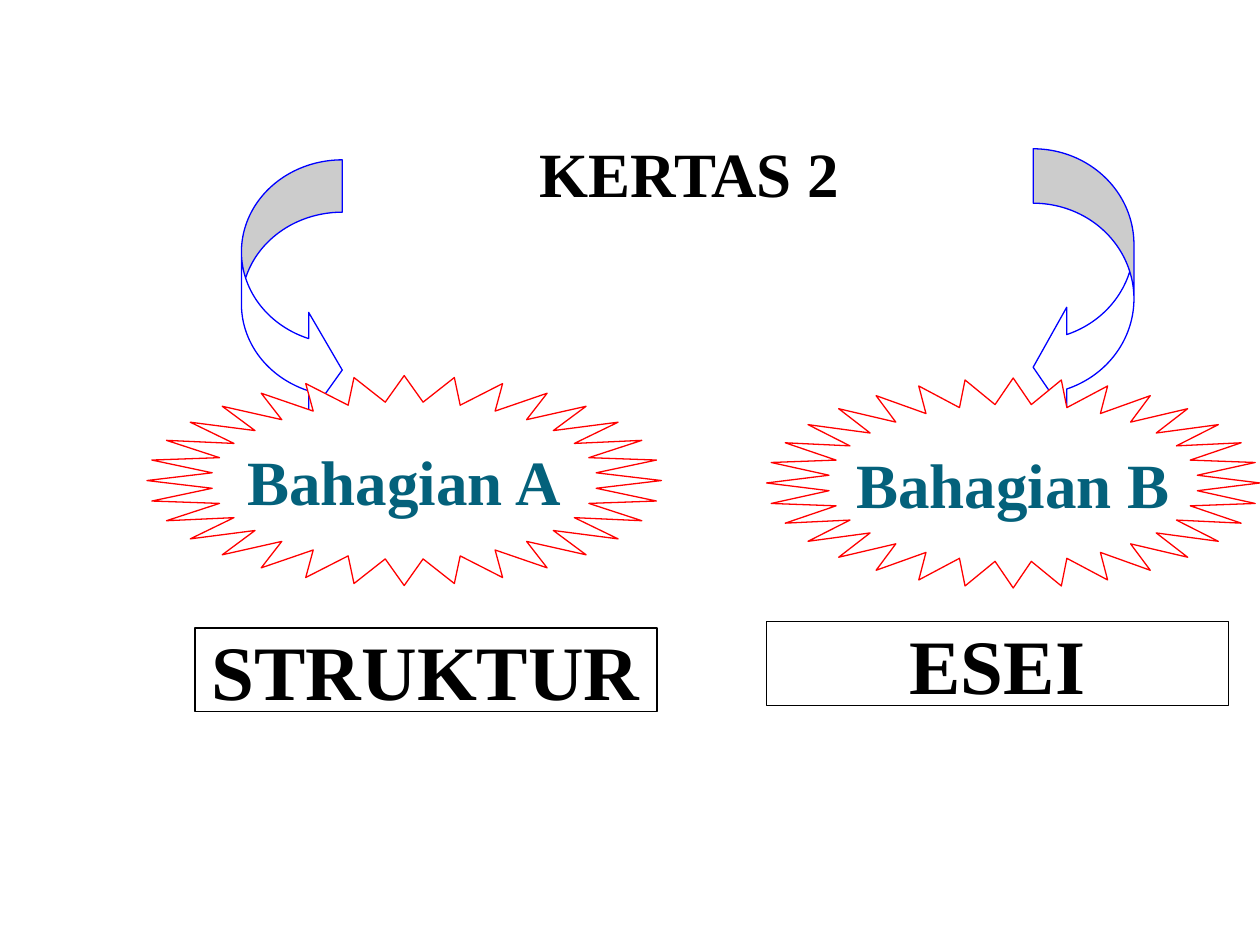
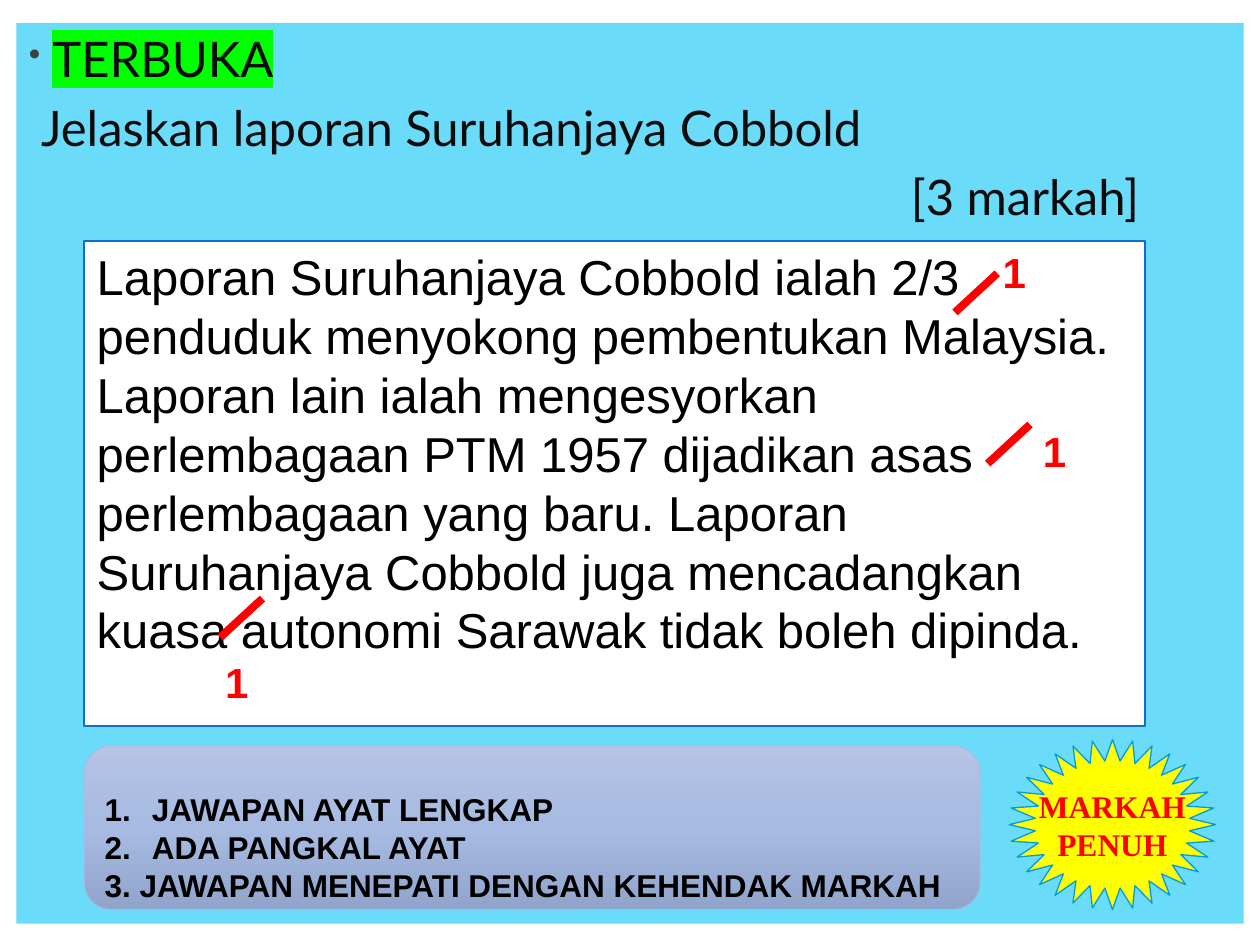
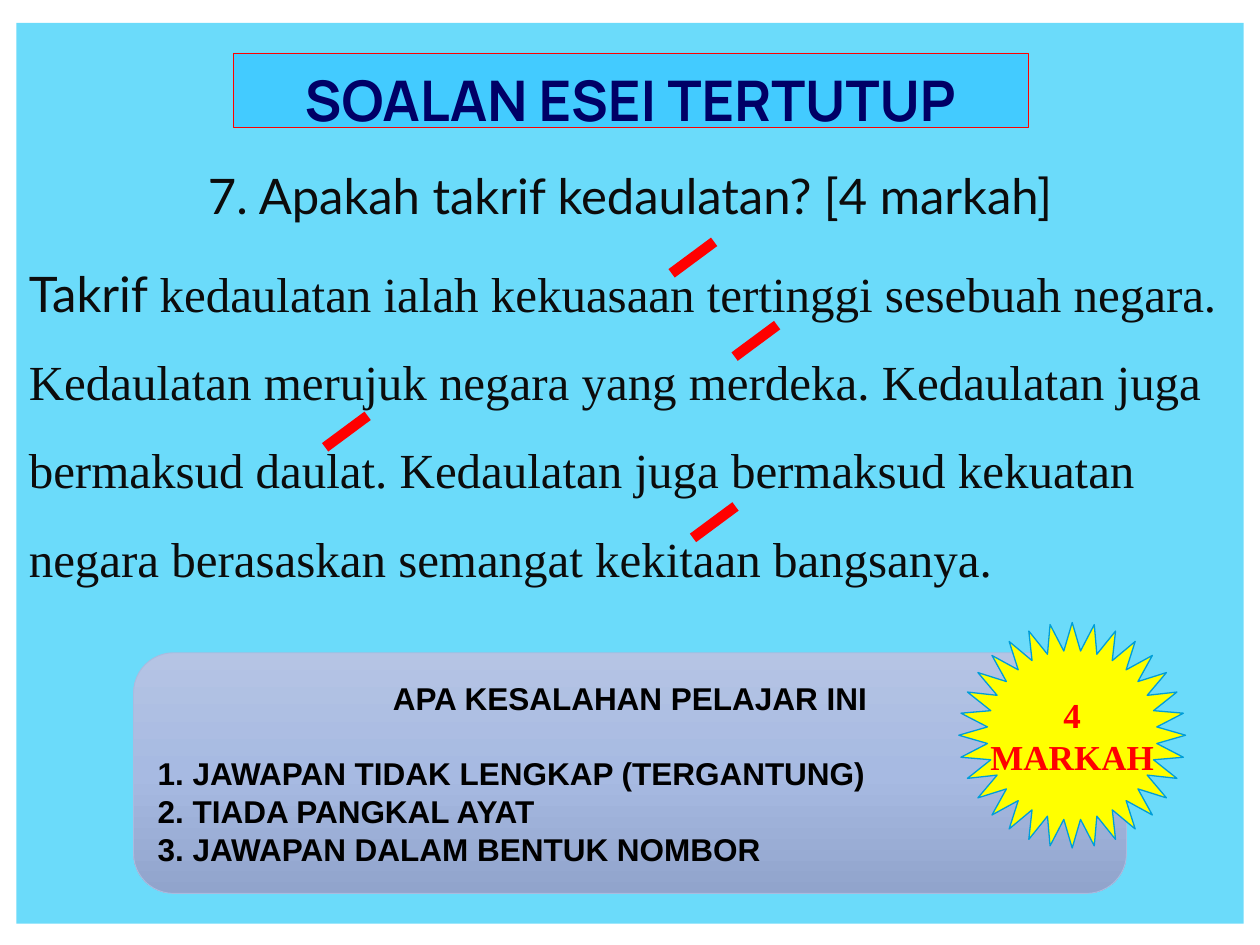
from copy import deepcopy
from lxml.etree import SubElement as Sub
from pptx import Presentation
from pptx.dml.color import RGBColor
from pptx.enum.shapes import MSO_CONNECTOR as Link, MSO_SHAPE as Kind
from pptx.enum.text import MSO_ANCHOR as Anchor, PP_ALIGN as Align
from pptx.oxml.ns import qn
from pptx.util import Pt

WHITE = RGBColor(0xFF, 0xFF, 0xFF)
BLACK = RGBColor(0, 0, 0)
INK = RGBColor(0x0C, 0x0C, 0x0C)
RED = RGBColor(0xFF, 0, 0)
BLUE = RGBColor(0, 0, 0xFF)
NAVY = RGBColor(0, 0, 0x66)
TEAL = RGBColor(0x04, 0x61, 0x7B)
SKY = RGBColor(0x6B, 0xDB, 0xFA)
BAND = RGBColor(0x43, 0xCB, 0xFF)
FRAME = RGBColor(0x0F, 0x6F, 0xC6)
YELLOW = RGBColor(0xFF, 0xFF, 0)
CYAN = RGBColor(0, 0x9D, 0xD9)
EDGE = RGBColor(0xAA, 0xBB, 0xDF)
FADE = (RGBColor(0xB5, 0xC4, 0xE4), RGBColor(0xA7, 0xBA, 0xE2),
        RGBColor(0x91, 0xA4, 0xCC))
SERIF, SANS, LATO = "Times New Roman", "Arial", "Lato"
PAGE = (9.4, 13, 701.2, 514.8)


def put(item, vals):
    for key, val in vals.items():
        setattr(item, key, val)


def face(name, size, color, bold=False):
    return {"name": name, "size": Pt(size), "bold": bold, "color": color}


def ink(font, look):
    put(font, {key: val for key, val in look.items() if key != "color"})
    font.color.rgb = look["color"]


def mold(slide, kind, box, fill=WHITE, line=None, weight=0.75, adj=()):
    shape = slide.shapes.add_shape(kind, *map(Pt, box))
    shape.shadow.inherit = False
    if fill:
        shape.fill.solid()
        shape.fill.fore_color.rgb = fill
    if line:
        shape.line.color.rgb = line
        shape.line.width = Pt(weight)
    else:
        shape.line.fill.background()
    for spot, val in enumerate(adj):
        shape.adjustments[spot] = val
    return shape


def write(shape, texts, look, align=Align.LEFT, anchor=Anchor.TOP, wrap=True):
    frame = shape.text_frame
    put(frame, {"word_wrap": wrap, "vertical_anchor": anchor})
    paras = []
    for spot, text in enumerate(texts):
        para = frame.add_paragraph() if spot else frame.paragraphs[0]
        para.alignment = align
        run = para.add_run()
        run.text = text
        ink(run.font, look)
        paras.append(para)
    return paras


def inset(para, left, first=0):
    props = para._p.get_or_add_pPr()
    props.set("marL", str(Pt(left)))
    props.set("indent", str(Pt(first)))
    return props


def burst(slide, box, texts, look, fill, line):
    star = mold(slide, Kind.STAR_32_POINT, box, fill, line, adj=[0.375])
    write(star, texts, look, Align.CENTER, Anchor.MIDDLE, False)


def branch(slide, box, arrow, star, label, kind, adj, names):
    left, top = box

    def shift(part):
        return left + part[0], top + part[1], *part[2:]

    mold(slide, kind, shift(arrow), WHITE, BLUE, adj=adj)
    burst(slide, shift(star), names[:1], face(SERIF, 36, TEAL, True), WHITE, RED)
    card = mold(slide, Kind.RECTANGLE, shift(label), WHITE, BLACK)
    write(card, names[1:], face(SERIF, 44, BLACK, True),
          Align.CENTER, Anchor.MIDDLE, False)


def panel(slide, box, texts):
    shape = mold(slide, Kind.ROUNDED_RECTANGLE, box, None, EDGE, 0.5)
    fill = shape.fill
    fill.gradient()
    fill.gradient_angle = 270
    stops = shape._element.spPr.find(".//" + qn("a:gsLst"))
    stops.append(deepcopy(stops[0]))
    for stop, color, place in zip(fill.gradient_stops, FADE, (0, 0.5, 1)):
        stop.color.rgb = color
        stop.position = place
    return shape, write(shape, texts, face(SANS, 18, BLACK, True),
                        anchor=Anchor.MIDDLE)


def ticks(slide, box, spots, size, weight):
    wide, high = size
    for x, y in spots:
        x, y = box[0] + x, box[1] + y
        line = slide.shapes.add_connector(
            Link.STRAIGHT, *map(Pt, (x, y, x + wide, y - high)))
        line.line.color.rgb = RED
        line.line.width = Pt(weight)
        Sub(line._element.spPr, qn("a:effectLst"))


def answer(slide, box):
    card = mold(slide, Kind.RECTANGLE, box, WHITE, FRAME, 1)
    write(card, ["Laporan Suruhanjaya Cobbold ialah 2/3 penduduk menyokong "
                 "pembentukan Malaysia. Laporan lain ialah mengesyorkan "
                 "perlembagaan PTM 1957 dijadikan asas perlembagaan yang baru. "
                 "Laporan Suruhanjaya Cobbold juga mencadangkan kuasa autonomi "
                 "Sarawak tidak boleh dipinda."], face(SANS, 28, BLACK))
    ticks(slide, box, [(497.5, 41), (516.2, 127.4), (77.6, 226.8)],
          (24.2, 22.3), 4.5)
    for x, y in [(517.7, 0), (540.7, 102.2), (73.4, 234)]:
        note = slide.shapes.add_textbox(
            *map(Pt, (box[0] + x, box[1] + y, 36.7, 36)))
        write(note, ["1"], face(SANS, 24, RED, True))


def papers(slide):
    title = mold(slide, Kind.RECTANGLE, (208, 73.4, 372.2, 50.4))
    write(title, ["KERTAS 2"], face(SERIF, 36, BLACK, True), Align.CENTER)
    branch(slide, (84, 91.4), (54, 0, 57.6, 150), (0, 123.2, 294, 120),
           (27.4, 267.4, 264, 48), Kind.CURVED_RIGHT_ARROW,
           (0.519, 1.039, 0.333), ["Bahagian A", "STRUKTUR"])
    branch(slide, (438, 85), (152.4, 0, 57.6, 156), (0, 131, 282, 120),
           (0, 270, 264, 48), Kind.CURVED_LEFT_ARROW,
           (0.54, 1.081, 0.333), ["Bahagian B", "ESEI"])


def opened(slide):
    body = mold(slide, Kind.RECTANGLE, PAGE, SKY)
    paras = write(body, ["TERBUKA", "Jelaskan laporan Suruhanjaya Cobbold",
                         "[3 markah]"], face(LATO, 28, INK))
    props = inset(paras[0], 13.5, -13.5)
    Sub(Sub(props, qn("a:buClr")), qn("a:srgbClr")).set("val", "3F3F3F")
    Sub(props, qn("a:buSzPct")).set("val", "70000")
    Sub(props, qn("a:buChar")).set("char", "•")
    mark = Sub(paras[0].runs[0].font._element, qn("a:highlight"))
    Sub(mark, qn("a:srgbClr")).set("val", "00FF00")
    mark.getparent().insert(1, mark)
    for para, left in zip(paras[1:], (7, 504)):
        inset(para, left)
        para.space_before = Pt(5.6)
    answer(slide, (48.2, 137.5, 606.2, 277.2))
    burst(slide, (576.7, 422.6, 118, 97.2), ["MARKAH", "PENUH"],
          face(SERIF, 18, RED, True), YELLOW, CYAN)
    shape, paras = panel(slide, (48.2, 426.2, 512, 93.6),
                         ["JAWAPAN AYAT LENGKAP", "ADA PANGKAL AYAT",
                          "3. JAWAPAN MENEPATI DENGAN KEHENDAK MARKAH"])
    shape.text_frame.margin_top = Pt(25.2)
    for para in paras[:2]:
        Sub(inset(para, 27, -27), qn("a:buFont")).set("typeface", "+mj-lt")
        Sub(para._p.pPr, qn("a:buAutoNum")).set("type", "arabicPeriod")


def closed(slide):
    body = mold(slide, Kind.RECTANGLE, PAGE, SKY)
    body.text_frame.margin_top = Pt(81.5)
    asked, reply = write(body, ["7. Apakah takrif kedaulatan? [4 markah]",
                                "Takrif "], face(LATO, 28, INK))
    asked.alignment = Align.CENTER
    put(reply, {"line_spacing": 1.5, "space_before": Pt(5.6)})
    rest = reply.add_run()
    rest.text = ("kedaulatan ialah kekuasaan tertinggi sesebuah negara. "
                 "Kedaulatan merujuk negara yang merdeka. Kedaulatan juga "
                 "bermaksud daulat. Kedaulatan juga bermaksud kekuatan negara "
                 "berasaskan semangat kekitaan bangsanya.")
    ink(rest.font, face(SERIF, 28, INK))
    title = mold(slide, Kind.RECTANGLE, (133.2, 30.2, 454.3, 42.5),
                 BAND, RED, 0.25)
    put(title.text_frame, {"margin_" + side: Pt(7.2)
                           for side in ("left", "top", "right", "bottom")})
    write(title, ["SOALAN ESEI TERTUTUP"], face("Manrope", 32, NAVY, True),
          Align.CENTER)
    paras = panel(slide, (76.3, 373, 567.4, 137.5),
                  ["APA KESALAHAN PELAJAR INI",
                   "1. JAWAPAN TIDAK LENGKAP (TERGANTUNG)",
                   "2. TIADA PANGKAL AYAT",
                   "3. JAWAPAN DALAM BENTUK NOMBOR"])[1]
    paras[0].alignment = Align.CENTER
    paras[1].space_before = Pt(21.6)
    burst(slide, (547.9, 355.7, 129.6, 128.9), ["4", "MARKAH"],
          face(SERIF, 20, RED, True), YELLOW, CYAN)
    ticks(slide, PAGE, [(374.4, 143.2), (386.6, 294.4), (176.4, 242.6),
                        (410.4, 190.8)], (24.3, 18), 6)


def main():
    deck = Presentation()
    put(deck, {"slide_width": Pt(720), "slide_height": Pt(540)})
    for build in (papers, opened, closed):
        build(deck.slides.add_slide(deck.slide_layouts[6]))
    deck.save("out.pptx")


if __name__ == "__main__":
    main()
